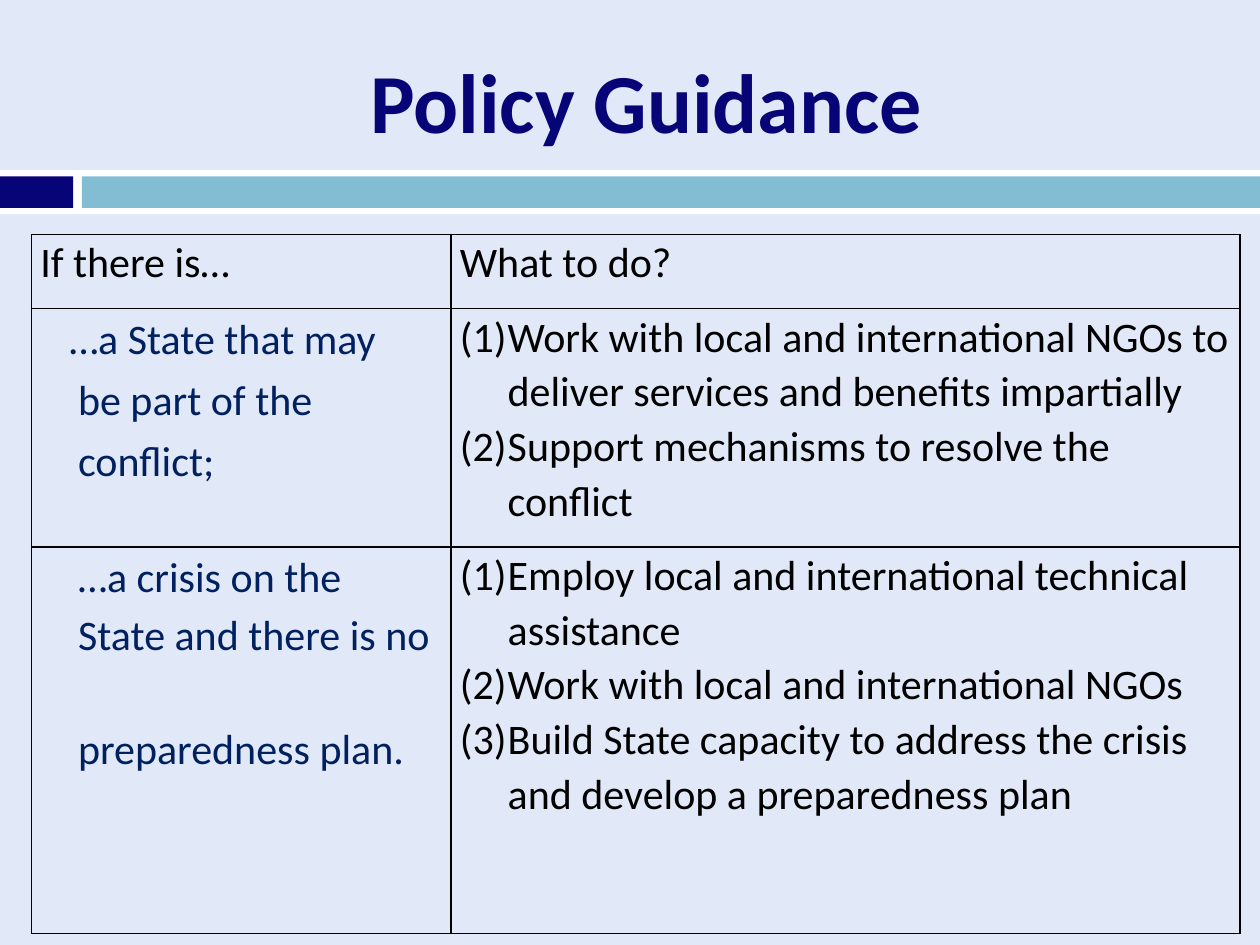
from lxml import etree
from pptx import Presentation
from pptx.dml.color import RGBColor
from pptx.enum import shapes, text
from pptx.oxml.ns import qn
from pptx.util import Inches, Pt

NAVY, TEAL, WHITE, BLACK = "070478", "83BDD4", "FFFFFF", "000000"
CASE_BLUE, BACKGROUND = "002060", "E1E8F7"


def color(hex_string):
    return RGBColor.from_string(hex_string)


class SlideBuilder:
    font = "Calibri"
    body_size = 24

    def __init__(self, slide):
        self.slide = slide
        slide.background.fill.solid()
        slide.background.fill.fore_color.rgb = color(BACKGROUND)

    def style(self, paragraph, size, hex_string, bold=False):
        for run in paragraph.runs:
            run.font.name = self.font
            run.font.size = Pt(size)
            run.font.bold = bold
            run.font.color.rgb = color(hex_string)

    def title(self, wording, left, top, width, height):
        title = self.slide.shapes.title
        title.left, title.top = Inches(left), Inches(top)
        title.width, title.height = Inches(width), Inches(height)
        title.text_frame.text = wording
        title.text_frame.vertical_anchor = text.MSO_ANCHOR.MIDDLE
        heading = title.text_frame.paragraphs[0]
        heading.alignment = text.PP_ALIGN.CENTER
        self.style(heading, 48, NAVY, bold=True)

    def band(self, left, top, width, height, fill):
        band = self.slide.shapes.add_shape(
            shapes.MSO_SHAPE.RECTANGLE,
            Inches(left), Inches(top), Inches(width), Inches(height))
        band.shadow.inherit = False
        band.fill.solid()
        band.fill.fore_color.rgb = color(fill)
        band.line.fill.background()

    def table(self, left, top, widths, heights):
        table = self.slide.shapes.add_table(
            len(heights), len(widths), Inches(left), Inches(top),
            Inches(sum(widths)), Inches(sum(heights))).table
        table.first_row = table.horz_banding = False
        for column, width in zip(table.columns, widths):
            column.width = Inches(width)
        for row, height in zip(table.rows, heights):
            row.height = Inches(height)
        return table

    def cell(self, cell, lines, hex_string=BLACK, spacing=1.07, after=0,
             indents=None, numbered=False):
        cell.margin_left = cell.margin_right = Inches(0.07)
        cell.margin_top = cell.margin_bottom = 0
        self.borders(cell)
        cell.fill.background()
        cell.text_frame.text = "\n".join(lines)
        for index, paragraph in enumerate(cell.text_frame.paragraphs):
            paragraph.line_spacing = spacing
            paragraph.space_after = Pt(after)
            self.style(paragraph, self.body_size, hex_string)
            if indents:
                self.indent(paragraph, indents[index])
            if numbered:
                self.indent(paragraph, 0.38, -0.38)
                etree.SubElement(paragraph._p.get_or_add_pPr(),
                                 qn("a:buAutoNum"), type="arabicParenBoth")

    def indent(self, paragraph, margin, first=0):
        properties = paragraph._p.get_or_add_pPr()
        properties.set("marL", str(Inches(margin)))
        properties.set("indent", str(Inches(first)))

    def borders(self, cell):
        properties = cell._tc.get_or_add_tcPr()
        for side in ("a:lnL", "a:lnR", "a:lnT", "a:lnB"):
            line = etree.SubElement(properties, qn(side), w=str(Pt(1)))
            fill = etree.SubElement(line, qn("a:solidFill"))
            etree.SubElement(fill, qn("a:srgbClr"), val=BLACK)


def main():
    deck = Presentation()
    deck.slide_width, deck.slide_height = Inches(10), Inches(7.5)
    builder = SlideBuilder(deck.slides.add_slide(deck.slide_layouts[5]))

    # Heading and divider
    builder.band(0, 1.35, 10, 0.35, WHITE)
    builder.band(0, 1.4, 0.58, 0.25, NAVY)
    builder.band(0.65, 1.4, 9.35, 0.25, TEAL)
    builder.title("Policy Guidance", 0.67, 0.25, 8.92, 1.08)

    # Guidance table: header, then situation and response rows
    guidance = builder.table(0.25, 1.86, [3.33, 6.26], [0.59, 1.89, 3.07])
    for column, header in enumerate(["If there is…", "What to do?"]):
        builder.cell(guidance.cell(0, column), [header])

    cases = [
        (["…a State that may", "be part of the", "conflict;"],
         [0.23, 0.3, 0.3], 2.4,
         ["Work with local and international NGOs to deliver services and "
          "benefits impartially",
          "Support mechanisms to resolve the conflict"]),
        (["…a crisis on the", "State and there is no", "preparedness plan."],
         [0.3, 0.3, 0.3], 0.6,
         ["Employ local and international technical assistance",
          "Work with local and international NGOs",
          "Build State capacity to address the crisis and develop a "
          "preparedness plan"]),
    ]
    for row, (situation, indents, after, actions) in enumerate(cases, start=1):
        builder.cell(guidance.cell(row, 0), situation, CASE_BLUE, 1.11, after,
                     indents=indents)
        builder.cell(guidance.cell(row, 1), actions, numbered=True)

    # Extra gap above the closing line of the last situation
    closing_line = guidance.cell(2, 0).text_frame.paragraphs[-1]
    closing_line.space_before = Pt(32.5)

    deck.save("out.pptx")


if __name__ == "__main__":
    main()
